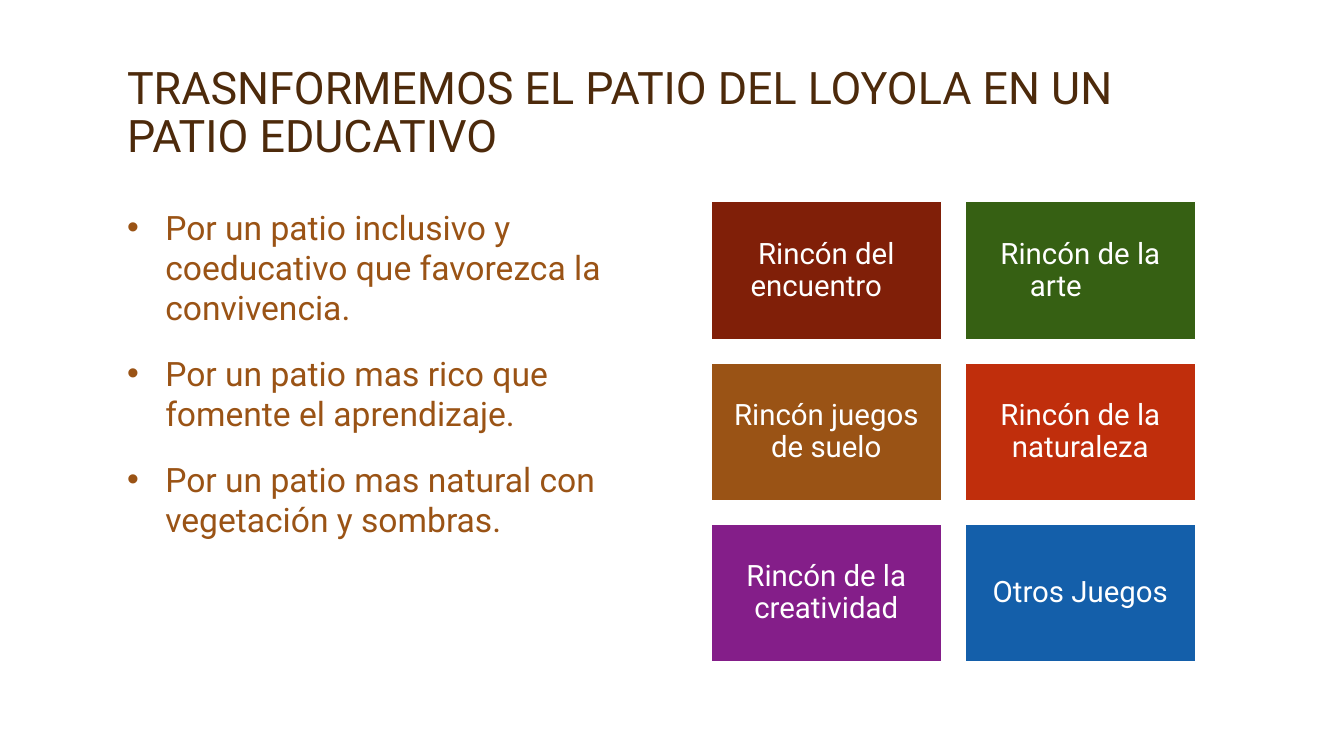
from lxml import etree
from pptx import Presentation
from pptx.dml.color import RGBColor
from pptx.enum.shapes import MSO_SHAPE
from pptx.enum.text import MSO_ANCHOR, MSO_AUTO_SIZE, PP_ALIGN
from pptx.oxml.ns import qn
from pptx.util import Inches, Pt

RECTANGLE = MSO_SHAPE.RECTANGLE
BOTTOM, MIDDLE, TOP = MSO_ANCHOR.BOTTOM, MSO_ANCHOR.MIDDLE, MSO_ANCHOR.TOP
NO_AUTOFIT = MSO_AUTO_SIZE.NONE
LEFT, CENTER = PP_ALIGN.LEFT, PP_ALIGN.CENTER

FONT = "Roboto"
COLORS = {
    "title": "4D2A0B", "body": "9A5315", "white": "FFFFFF",
    "brick": "801F08", "green": "366013", "brown": "9A5315",
    "red": "C02E0C", "purple": "841E89", "blue": "145FAA",
}

TITLE = "TRASNFORMEMOS EL PATIO DEL LOYOLA EN UN PATIO EDUCATIVO"
GOALS = [
    "Por un patio inclusivo y coeducativo que favorezca la convivencia.",
    "Por un patio mas rico que fomente el aprendizaje.",
    "Por un patio mas natural con vegetación y sombras.",
]
CORNERS = [
    ("Rincón del encuentro\t", "brick"),
    ("Rincón de la arte\t", "green"),
    ("Rincón juegos de suelo", "brown"),
    ("Rincón de la naturaleza", "red"),
    ("Rincón de la creatividad", "purple"),
    ("Otros Juegos", "blue"),
]


def color(name):
    return RGBColor.from_string(COLORS[name])


def format_runs(paragraph, size, color_name):
    for run in paragraph.runs:
        run.font.size = Pt(size)
        run.font.name = FONT
        run.font.color.rgb = color(color_name)


def place(shape, left, top, width, height):
    shape.left, shape.top = Inches(left), Inches(top)
    shape.width, shape.height = Inches(width), Inches(height)


def add_bullet(paragraph, indent):
    properties = paragraph._p.get_or_add_pPr()
    properties.set("marL", str(Inches(indent)))
    properties.set("indent", str(-Inches(indent)))
    etree.SubElement(properties, qn("a:buFont"), typeface="Arial")
    etree.SubElement(properties, qn("a:buChar"), char="•")


def fill_title(title, left, top, width, height):
    place(title, left, top, width, height)
    frame = title.text_frame
    frame.text = TITLE
    frame.auto_size = NO_AUTOFIT
    frame.vertical_anchor = BOTTOM
    paragraph = frame.paragraphs[0]
    paragraph.alignment = LEFT
    paragraph.line_spacing = 0.9
    format_runs(paragraph, 32, "title")


def fill_goals(body, left, top, width, height):
    place(body, left, top, width, height)
    frame = body.text_frame
    frame.text = "\n".join(GOALS)
    frame.auto_size = NO_AUTOFIT
    frame.vertical_anchor = TOP
    for index, paragraph in enumerate(frame.paragraphs):
        add_bullet(paragraph, 0.38)
        paragraph.space_before = Pt(18 if index else 0)
        format_runs(paragraph, 24, "body")


def add_corner(slide, label, fill, left, top, width, height):
    tile = slide.shapes.add_shape(RECTANGLE, Inches(left), Inches(top),
                                  Inches(width), Inches(height))
    tile.shadow.inherit = False
    tile.fill.solid()
    tile.fill.fore_color.rgb = color(fill)
    tile.line.color.rgb = color("white")
    tile.line.width = Pt(1)
    frame = tile.text_frame
    frame.word_wrap = True
    frame.vertical_anchor = MIDDLE
    frame.margin_left = frame.margin_right = Inches(0.09)
    frame.margin_top = frame.margin_bottom = Inches(0.09)
    frame.text = label
    paragraph = frame.paragraphs[0]
    paragraph.alignment = CENTER
    paragraph.line_spacing = 0.9
    format_runs(paragraph, 21, "white")


def add_corner_grid(slide, left, top, width, height, columns=2, gap=0.23):
    """Spread the corners over equal tiles that fill the box."""
    rows = len(CORNERS) // columns
    tile_width = (width - gap * (columns - 1)) / columns
    tile_height = (height - gap * (rows - 1)) / rows
    for index, (label, fill) in enumerate(CORNERS):
        row, column = divmod(index, columns)
        add_corner(slide, label, fill,
                   left + column * (tile_width + gap),
                   top + row * (tile_height + gap),
                   tile_width, tile_height)


def main():
    presentation = Presentation()
    presentation.slide_width = Inches(13.33)
    presentation.slide_height = Inches(7.5)
    slide = presentation.slides.add_slide(presentation.slide_layouts[1])
    fill_title(slide.shapes.title, 1.16, 0.33, 11, 1.33)
    fill_goals(slide.placeholders[1], 1.16, 2, 5.59, 4.58)
    add_corner_grid(slide, 7.05, 2, 4.81, 4.57)
    presentation.save("out.pptx")


if __name__ == "__main__":
    main()
